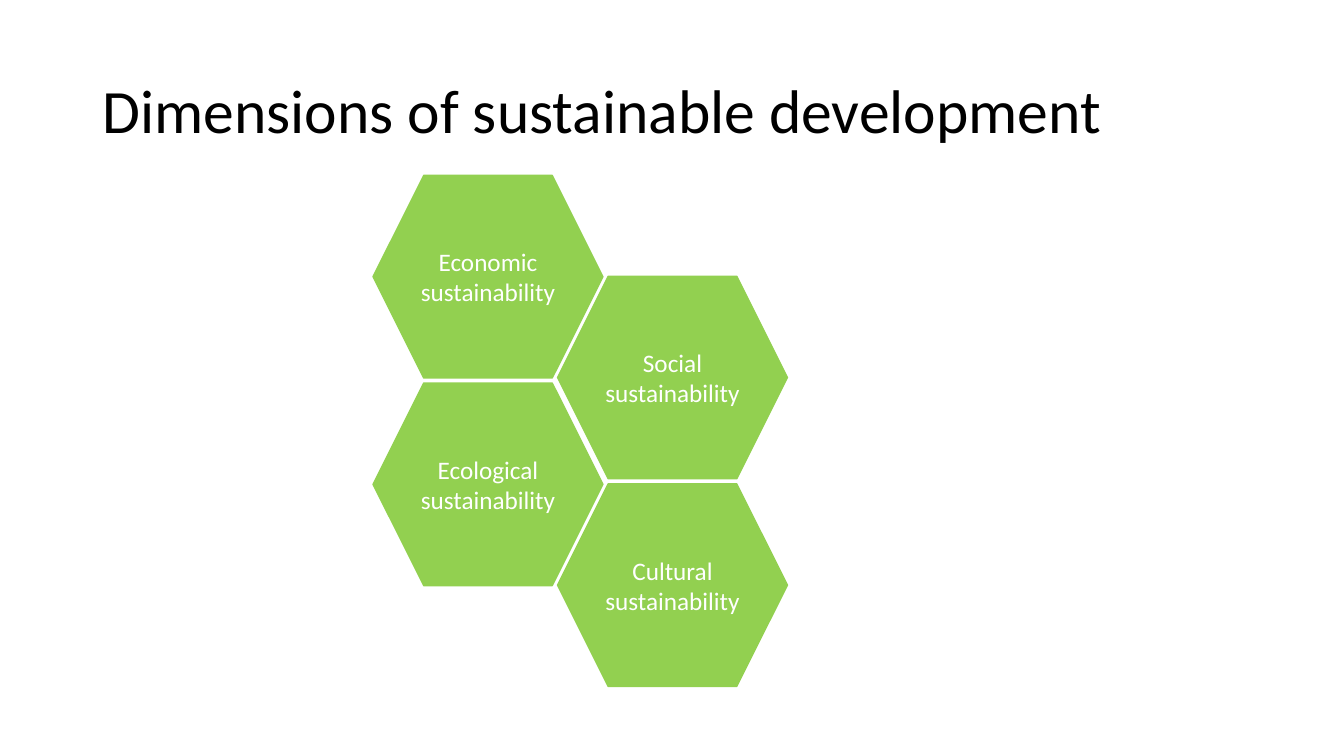
from pptx import Presentation
from pptx.dml.color import RGBColor
from pptx.enum.shapes import MSO_SHAPE as SHAPE
from pptx.enum.text import MSO_ANCHOR as ANCHOR, PP_ALIGN as ALIGN
from pptx.util import Pt

PX = 9144
COLORS = {"text": "000000", "hexagon": "92D050", "label": "FFFFFF"}
DIMENSIONS = [
    ["Economic sustainability", "Ecological sustainability"],
    ["Social sustainability", "Cultural sustainability"],
]


def rgb(name):
    return RGBColor.from_string(COLORS[name])


def px(*lengths):
    return [n * PX for n in lengths]


def add_text(sp, text, size, color, align):
    tf = sp.text_frame
    tf.word_wrap = True
    tf.vertical_anchor = ANCHOR.MIDDLE
    p = tf.paragraphs[0]
    p.alignment = align
    r = p.add_run()
    r.text = text
    r.font.name = "Calibri"
    r.font.size = Pt(size)
    r.font.color.rgb = rgb(color)
    return p


def add_title(s, x, y, w, h):
    sp = s.shapes.add_textbox(*px(x, y, w, h))
    p = add_text(sp, "Dimensions of sustainable development", 44, "text", ALIGN.LEFT)
    p.line_spacing = 0.9


def add_hexagon(group, text, x, y, w, h):
    sp = group.shapes.add_shape(SHAPE.HEXAGON, *px(x, y, w, h))
    sp.shadow.inherit = False
    sp.fill.solid()
    sp.fill.fore_color.rgb = rgb("hexagon")
    sp.line.color.rgb = rgb("hexagon")
    sp.line.width = Pt(1)
    tf = sp.text_frame
    tf.margin_left = tf.margin_right = tf.margin_top = tf.margin_bottom = 0
    add_text(sp, text, 18, "label", ALIGN.CENTER)


def add_honeycomb(s, x, y, w, h):
    hex_w, hex_h, gap, drop = 228, 201, 5, 100
    group = s.shapes.add_group_shape()
    for col, labels in enumerate(DIMENSIONS):
        for row, label in enumerate(labels):
            left = x + col * (w - hex_w)
            top = y + col * drop + row * (hex_h + gap)
            add_hexagon(group, label, left, top, hex_w, hex_h)


def main():
    prs = Presentation()
    prs.slide_width, prs.slide_height = px(1333, 750)
    s = prs.slides.add_slide(prs.slide_layouts[6])
    add_title(s, 92, 40, 1150, 145)
    add_honeycomb(s, 370, 174, 411, 507)
    prs.save("out.pptx")


if __name__ == "__main__":
    main()
